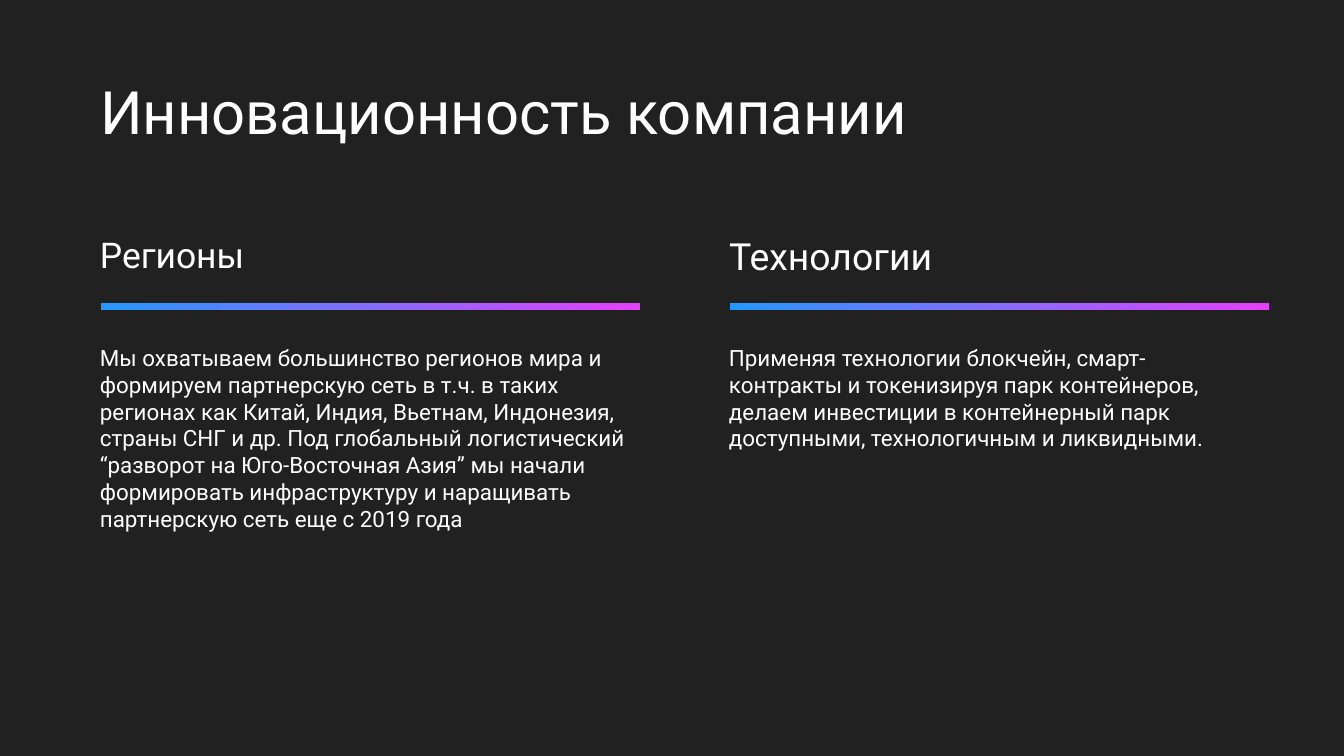
from dataclasses import dataclass

from pptx import Presentation
from pptx.dml.color import RGBColor
from pptx.enum.shapes import MSO_SHAPE as Shape
from pptx.enum.text import MSO_ANCHOR as Anchor
from pptx.util import Emu, Pt

WHITE = RGBColor(0xFF, 0xFF, 0xFF)
DARK = RGBColor(0x21, 0x21, 0x21)
BLUE = RGBColor(0x27, 0x97, 0xFF)
PINK = RGBColor(0xE4, 0x40, 0xFF)
FONT = "Roboto"

# Column grid, in px
LEFT, STEP = 87, 629
INSET = 13


@dataclass
class Column:
    head: str
    size: int
    width: int
    body: str


COLUMNS = [
    Column("Регионы", 19, 309,
           "Мы охватываем большинство регионов мира и формируем партнерскую "
           "сеть в т.ч. в таких регионах как Китай, Индия, Вьетнам, Индонезия, "
           "страны СНГ и др. Под глобальный логистический “разворот на "
           "Юго-Восточная Азия” мы начали формировать инфраструктуру и "
           "наращивать партнерскую сеть еще с 2019 года"),
    Column("Технологии", 20, 353,
           "Применяя технологии блокчейн, смарт-контракты и токенизируя парк "
           "контейнеров, делаем инвестиции в контейнерный парк доступными, "
           "технологичным и ликвидными."),
]


def px(n: int) -> Emu:
    return Emu(round(n * 914400 / 134.4))


def add_text(slide, x: int, y: int, w: int, h: int, text: str, size: int) -> None:
    box = slide.shapes.add_textbox(px(x), px(y), px(w), px(h))
    frame = box.text_frame
    frame.word_wrap = True
    frame.vertical_anchor = Anchor.TOP
    frame.margin_left = frame.margin_right = px(INSET)
    frame.margin_top = frame.margin_bottom = px(INSET)
    run = frame.paragraphs[0].add_run()
    run.text = text
    run.font.name = FONT
    run.font.size = Pt(size)
    run.font.color.rgb = WHITE


def add_bar(slide, x: int, y: int, w: int, h: int) -> None:
    bar = slide.shapes.add_shape(Shape.RECTANGLE, px(x), px(y), px(w), px(h))
    bar.shadow.inherit = False
    bar.line.fill.background()
    bar.fill.gradient()
    bar.fill.gradient_angle = 0
    for stop, color, at in zip(bar.fill.gradient_stops, (BLUE, PINK), (0, 1)):
        stop.color.rgb = color
        stop.position = at


def add_column(slide, x: int, col: Column) -> None:
    add_bar(slide, x + 14, 303, 539, 7)
    add_text(slide, x, 220, col.width, 59, col.head, col.size)
    add_text(slide, x, 331, 554, 329, col.body, 12)


def main() -> None:
    deck = Presentation()
    deck.slide_width, deck.slide_height = px(1344), px(756)
    slide = deck.slides.add_slide(deck.slide_layouts[6])
    slide.background.fill.solid()
    slide.background.fill.fore_color.rgb = DARK

    # Columns
    for i, col in enumerate(COLUMNS):
        add_column(slide, LEFT + i * STEP, col)

    # Title
    add_text(slide, LEFT, 62, 956, 99, "Инновационность компании", 32)

    deck.save("out.pptx")


if __name__ == "__main__":
    main()
